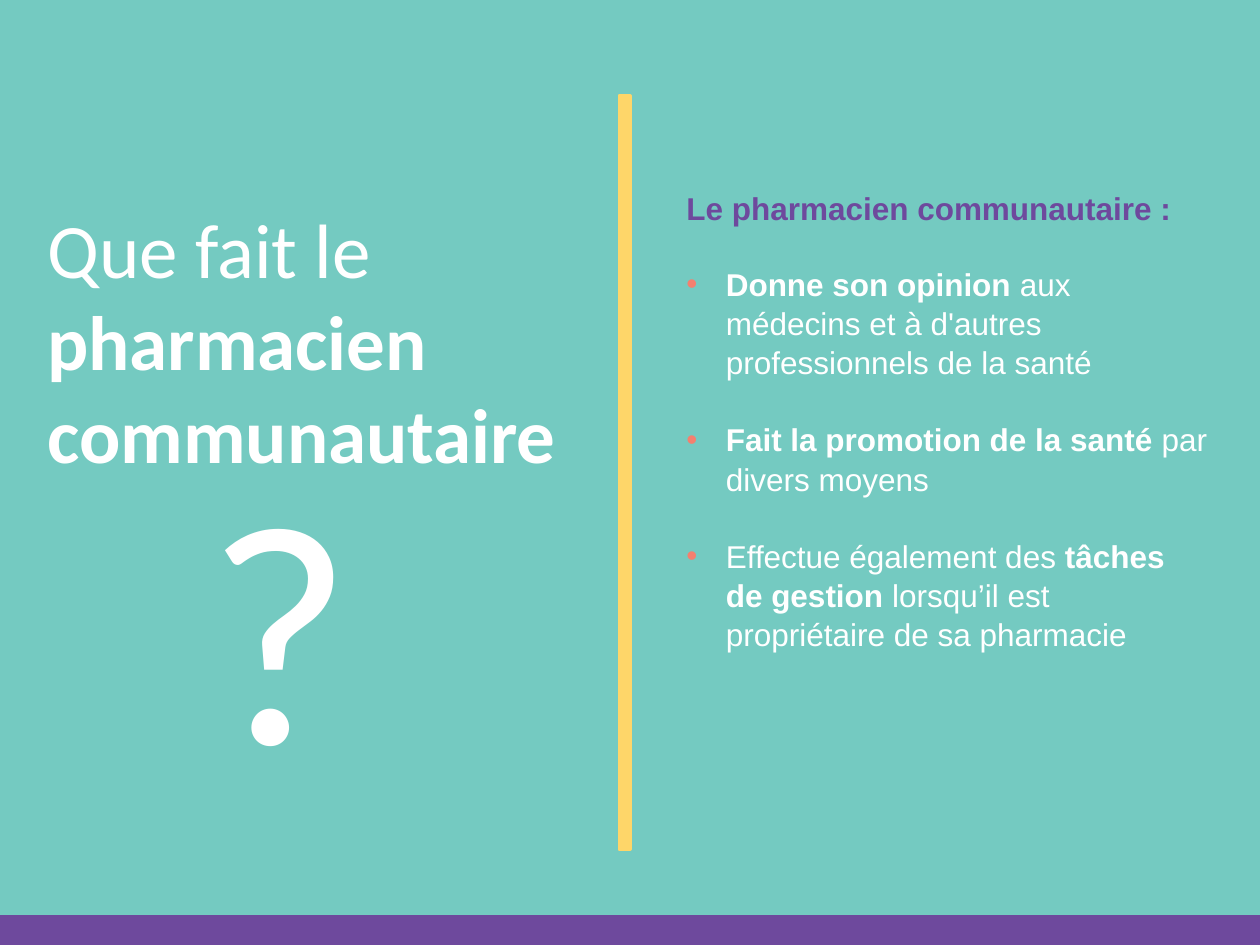
from lxml import etree
from pptx import Presentation
from pptx import util as u
from pptx.dml import color
from pptx.enum import shapes, text
from pptx.oxml import ns

TEAL, YELLOW, PURPLE = "74CAC1", "FED669", "6E499D"
WHITE, CORAL = "FFFFFF", "F4806F"
WIDTH, HEIGHT = 720, 540


def rgb(value):
    return color.RGBColor.from_string(value)


def span(words, **style):
    """Pair a piece of text with its format."""
    return words, style


class Builder:
    """Holds the default text style and the page being filled."""

    def __init__(self, page, font="Arial", size=18, ink=WHITE):
        self.page, self.font, self.size, self.ink = page, font, size, ink

    def bar(self, left, top, width, height, fill):
        box = self.page.shapes.add_shape(
            shapes.MSO_SHAPE.RECTANGLE, *map(u.Pt, (left, top, width, height)))
        box.shadow.inherit = False
        box.fill.solid()
        box.fill.fore_color.rgb = rgb(fill)
        box.line.color.rgb = rgb(fill)
        box.line.width = u.Pt(2)

    def text(self, left, top, width, height, paras, bullet=None, gap=0, spacing=1.0):
        """Write one paragraph for each list of spans in paras."""
        box = self.page.shapes.add_textbox(*map(u.Pt, (left, top, width, height)))
        frame = box.text_frame
        frame.word_wrap = True
        frame.auto_size = text.MSO_AUTO_SIZE.SHAPE_TO_FIT_TEXT
        for index, spans in enumerate(paras):
            para = frame.add_paragraph() if index else frame.paragraphs[0]
            para.line_spacing = spacing
            if index < len(paras) - 1:
                para.space_after = u.Pt(gap)
            if bullet:
                self.bullet(para, bullet)
            for words, style in spans:
                self.run(para, words, **style)

    def run(self, para, words, bold=False, font=None, size=None, ink=None):
        run = para.add_run()
        run.text = words
        run.font.name = font or self.font
        run.font.size = u.Pt(size or self.size)
        run.font.bold = bold
        run.font.color.rgb = rgb(ink or self.ink)

    def bullet(self, para, ink, indent=22.5):
        props = para._p.get_or_add_pPr()
        props.set("marL", str(u.Pt(indent)))
        props.set("indent", str(-u.Pt(indent)))
        tint = etree.SubElement(props, ns.qn("a:buClr"))
        etree.SubElement(tint, ns.qn("a:srgbClr"), val=ink)
        etree.SubElement(props, ns.qn("a:buFont"), typeface="Arial")
        etree.SubElement(props, ns.qn("a:buChar"), char="•")


def main():
    deck = Presentation()
    deck.slide_width, deck.slide_height = u.Pt(WIDTH), u.Pt(HEIGHT)
    build = Builder(deck.slides.add_slide(deck.slide_layouts[6]))

    build.bar(0, 0, WIDTH, HEIGHT, TEAL)
    build.bar(354, 54.7, 6, 430.6, YELLOW)
    build.text(20, 111.6, 329, 167, [[
        span("Que fait le ", font="Calibri", size=44),
        span("pharmacien communautaire", font="Calibri", size=44, bold=True),
    ]])
    build.text(385.2, 146.9, 311.8, 225.4, [
        [span("Donne son opinion ", bold=True),
         span("aux médecins et à d'autres professionnels de la santé")],
        [span("Fait la promotion de la santé ", bold=True),
         span("par divers moyens")],
        [span("Effectue également des "),
         span("tâches de gestion", bold=True),
         span(" lorsqu’il est propriétaire de sa pharmacie")],
    ], bullet=CORAL, gap=21.6, spacing=1.04)
    build.bar(0, 524, WIDTH, 16, PURPLE)
    build.text(385.2, 103.7, 295.2, 28.8, [
        [span("Le pharmacien communautaire :", bold=True, ink=PURPLE)],
    ], spacing=1.04)
    build.text(110.9, 241.9, 96.5, 225.4, [
        [span("?", font="Calibri", size=180)],
    ])

    deck.save("out.pptx")


if __name__ == "__main__":
    main()
